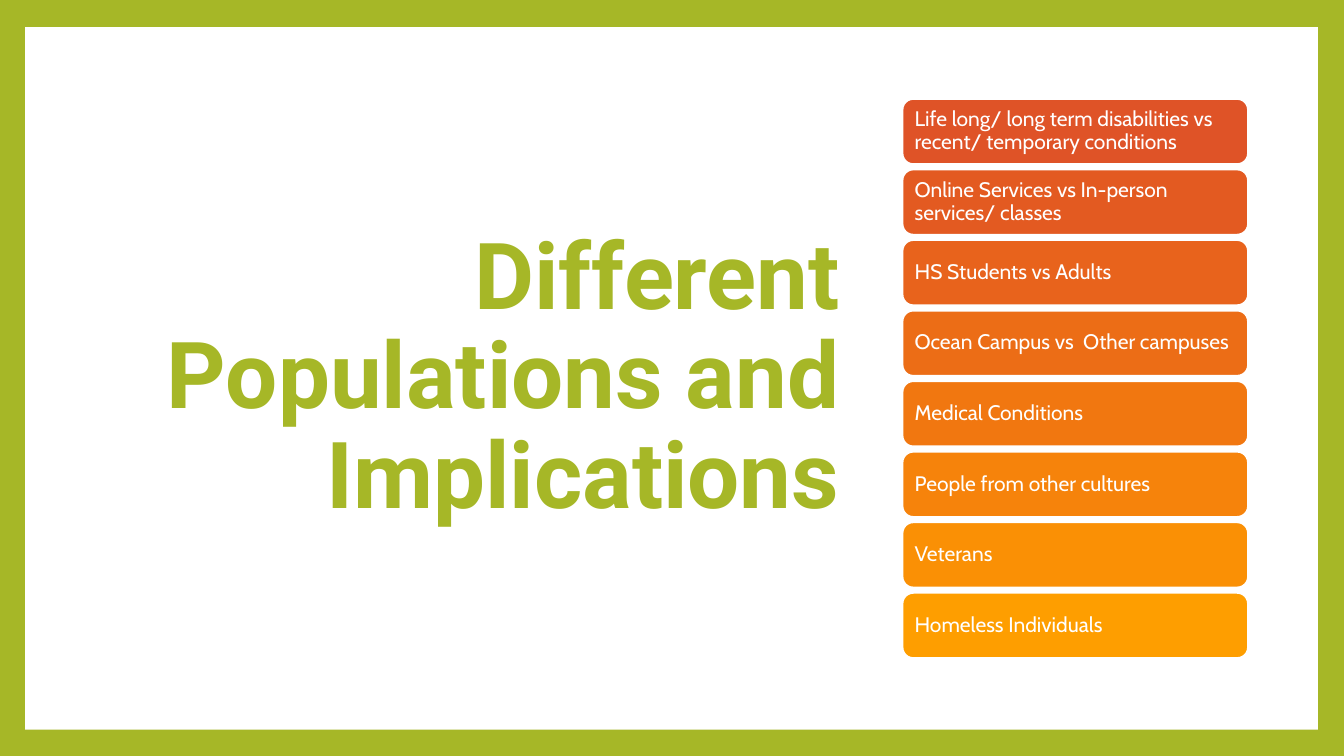
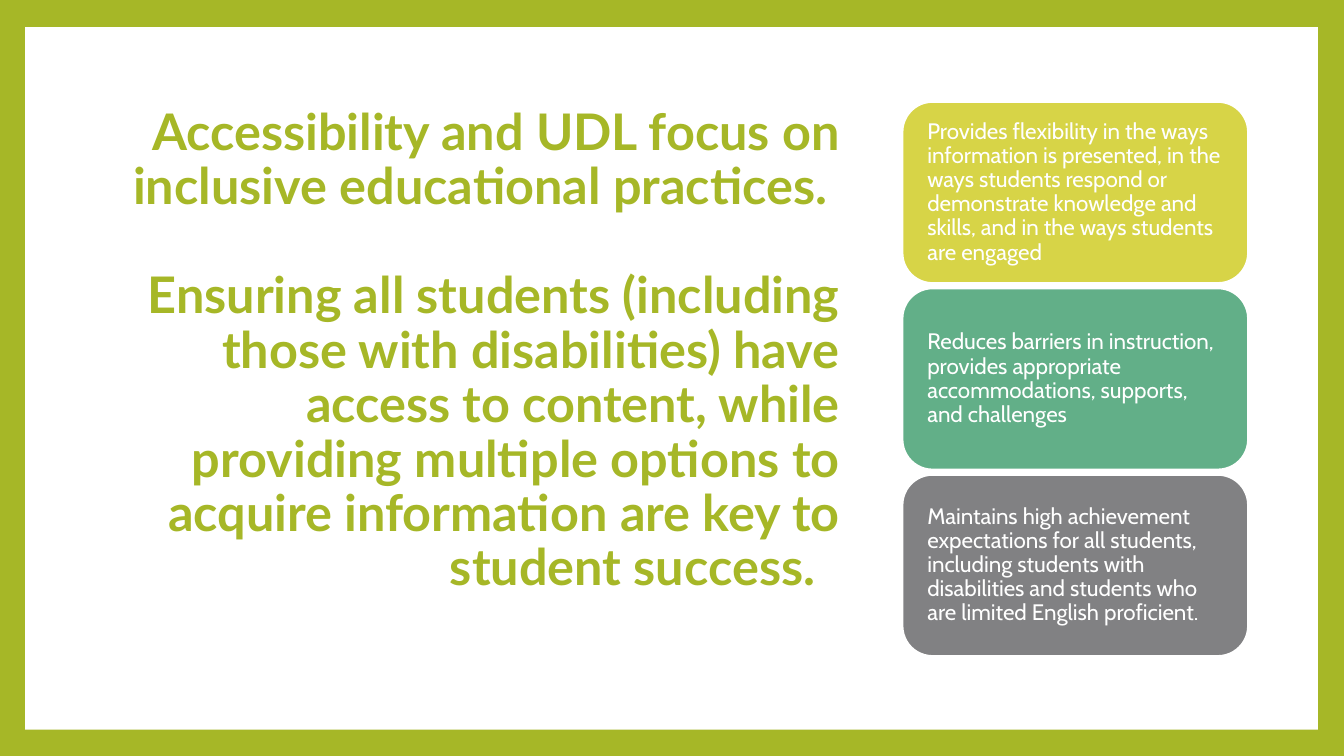
from pptx import Presentation
from pptx.dml.color import RGBColor
from pptx.enum.shapes import MSO_SHAPE
from pptx.enum.text import MSO_ANCHOR, MSO_AUTO_SIZE, PP_ALIGN
from pptx.util import Emu, Pt

EMU_PER_PX = 9144  # 100 px to the inch
COLOURS = {
    "green": "A6B727",
    "white": "FFFFFF",
    "lime": "D7D447",
    "teal": "62AF88",
    "grey": "818183",
    "orange 1": "DF5327",
    "orange 2": "E35A21",
    "orange 3": "E8631C",
    "orange 4": "EC6D16",
    "orange 5": "F17710",
    "orange 6": "F6830B",
    "orange 7": "FA9005",
    "orange 8": "FE9E00",
}
CARD_LEFT, CARD_WIDTH, CARD_GAP = 895, 343, 5

POPULATIONS = [
    ("Life long/ long term disabilities vs recent/ temporary conditions", "orange 1"),
    ("Online Services vs In-person services/ classes", "orange 2"),
    ("HS Students vs Adults", "orange 3"),
    ("Ocean Campus vs  Other campuses", "orange 4"),
    ("Medical Conditions", "orange 5"),
    ("People from other cultures", "orange 6"),
    ("Veterans", "orange 7"),
    ("Homeless Individuals", "orange 8"),
]
PRACTICES = [
    ("Provides flexibility in the ways information is presented, in the ways students "
     "respond or demonstrate knowledge and skills, and in the ways students are engaged",
     "lime"),
    ("Reduces barriers in instruction, provides appropriate accommodations, supports, "
     "and challenges", "teal"),
    ("Maintains high achievement expectations for all students, including students with "
     "disabilities and students who are limited English proficient.", "grey"),
]
FOCUS = [
    "Accessibility and UDL focus on inclusive educational practices. ",
    "Ensuring all students (including those with disabilities) have access to content, "
    "while providing multiple options to acquire information are key to student success.  ",
]


def px(length):
    return Emu(length * EMU_PER_PX)


def colour(name):
    return RGBColor.from_string(COLOURS[name])


def style_font(para, name, size, colour_name, bold=False):
    font = para.font
    font.name, font.size, font.bold = name, Pt(size), bold
    font.color.rgb = colour(colour_name)
    para.line_spacing = 0.9


def add_filled_shape(slide, preset, place, fill):
    shape = slide.shapes.add_shape(preset, *map(px, place))
    shape.shadow.inherit = False
    shape.fill.solid()
    shape.fill.fore_color.rgb = colour(fill)
    return shape


def prepare_layout(deck):
    """Give the title-only layout its green border and title position."""
    background = deck.slide_master.background.fill
    background.solid()
    background.fore_color.rgb = colour("green")

    layout = deck.slide_layouts[5]
    for holder in list(layout.placeholders):
        if holder.placeholder_format.idx != 0:
            layout.shapes.element.remove(holder.element)
    title = layout.placeholders[0]
    title.left, title.top, title.width, title.height = map(px, (96, 96, 747, 560))
    title.text_frame.vertical_anchor = MSO_ANCHOR.MIDDLE
    title.text_frame.auto_size = MSO_AUTO_SIZE.NONE
    return layout


def move_panel_to_layout(slide, layout):
    """Draw the white panel and put it behind everything on the layout."""
    panel = add_filled_shape(slide, MSO_SHAPE.RECTANGLE, (25, 27, 1282, 697), "white")
    panel.line.fill.background()
    layout.shapes.element.insert(2, panel.element)


def set_title(slide, paragraphs, font_name, size, gap=0, bottom_margin=5):
    frame = slide.shapes.title.text_frame
    frame.text = "\n".join(paragraphs)
    frame.margin_bottom = px(bottom_margin)
    for index, para in enumerate(frame.paragraphs):
        para.alignment = PP_ALIGN.RIGHT
        para.space_before = Pt(gap if index else 0)
        style_font(para, font_name, size, "green", bold=True)


def add_cards(slide, cards, top, height, margin, size):
    """Stack rounded cards down the right-hand column."""
    for index, (text, fill) in enumerate(cards):
        card_top = top + index * (height + CARD_GAP)
        card = add_filled_shape(slide, MSO_SHAPE.ROUNDED_RECTANGLE,
                                (CARD_LEFT, card_top, CARD_WIDTH, height), fill)
        card.line.color.rgb = colour("white")
        card.line.width = Pt(1.5)
        frame = card.text_frame
        frame.word_wrap = True
        frame.vertical_anchor = MSO_ANCHOR.MIDDLE
        frame.margin_left = frame.margin_right = px(margin)
        frame.margin_top = frame.margin_bottom = px(margin)
        frame.text = text
        para = frame.paragraphs[0]
        para.alignment = PP_ALIGN.LEFT
        style_font(para, "Cabin", size, "white")


def main():
    deck = Presentation()
    deck.slide_width, deck.slide_height = px(1333), px(750)
    layout = prepare_layout(deck)

    populations = deck.slides.add_slide(layout)
    move_panel_to_layout(populations, layout)
    set_title(populations, ["Different Populations and Implications"], "Roboto", 66)
    add_cards(populations, POPULATIONS, top=98, height=65, margin=9, size=15)

    practices = deck.slides.add_slide(layout)
    set_title(practices, FOCUS, "Lato", 36, gap=39, bottom_margin=59)
    add_cards(practices, PRACTICES, top=101, height=180, margin=16, size=16)

    deck.save("out.pptx")


if __name__ == "__main__":
    main()
